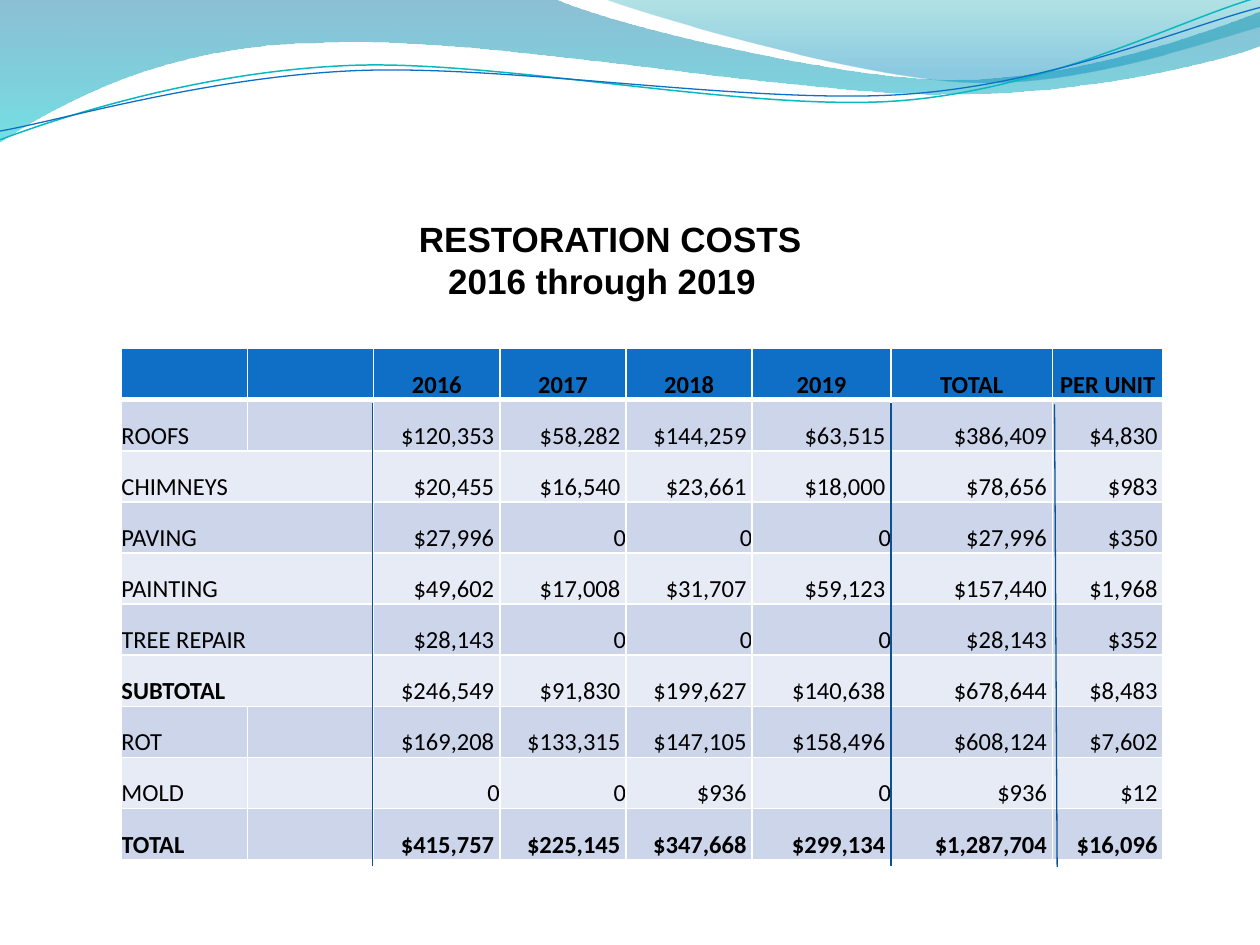
from dataclasses import dataclass
from typing import Optional

from lxml.etree import SubElement
from pptx import Presentation
from pptx.dml.color import RGBColor
from pptx.enum.shapes import MSO_CONNECTOR
from pptx.enum.text import MSO_ANCHOR, PP_ALIGN
from pptx.oxml import parse_xml
from pptx.oxml.ns import nsdecls, qn
from pptx.util import Pt

BLACK, WHITE, BLUE = "000000", "FFFFFF", "0F6FC6"
BANDS = ("CCD5EA", "E7EBF5")


@dataclass
class Stop:
    position: float
    color: str
    opacity: int


@dataclass
class Wave:
    """Outline in points: 2 numbers make a straight step, 6 a Bezier curve."""
    start: tuple
    steps: list
    stops: tuple = ()
    line: Optional[str] = None
    width: float = 0
    rotation: float = 0


@dataclass
class CostRow:
    label: str
    values: tuple
    merged: bool = False
    bold_label: bool = False
    bold_values: bool = False


@dataclass
class Rule:
    begin: tuple
    end: tuple


WAVES = [
    Wave((0, -0.7), [
        (316.8, -0.7),
        (342.7, 12.2, 478.1, 45.4, 545.8, 45.4),
        (614.2, 45.4, 689.8, 18.7, 720, 6.5),
        (720.7, 25.9),
        (707.8, 31.7, 626.4, 54.7, 537.1, 54),
        (447.8, 54, 275, 20.2, 185, 24.5),
        (92.9, 25.2, 33.1, 59.8, -0.7, 81.4),
        (0, -0.7),
    ], stops=(Stop(0, "0074A1", 45), Stop(1, "00C6CF", 55))),
    Wave((344.9, -0.7), [
        (366.5, 7.9, 491, 44.6, 553.7, 46.8),
        (616.3, 49.7, 691.9, 23, 720, 15.1),
        (720, 0),
        (344.9, -0.7),
    ], stops=(Stop(0, "00A1A9", 30), Stop(0.8, "008BBF", 45))),
    Wave((-1.4, 62.9), [
        (33.7, 51.6, 114, 29.4, 199.8, 29.9),
        (284.8, 30.3, 425.8, 67.2, 512.4, 64.9),
        (599, 62.4, 676.4, 25.7, 720.2, 15.6),
    ], line="0AB8BF", width=0.85, rotation=357.3),
    Wave((-1.2, 57.9), [
        (32.9, 53.7, 118.3, 32.5, 204, 33),
        (290.5, 33.5, 429, 63.1, 515.5, 61.3),
        (601.4, 59.6, 678.5, 30.1, 721.4, 21.3),
    ], line=BLUE, width=0.75, rotation=357.3),
]

HEADERS = ("", "", "2016", "2017", "2018", "2019", "TOTAL", "PER UNIT")
COSTS = [
    CostRow("ROOFS", (120353, 58282, 144259, 63515, 386409, 4830)),
    CostRow("CHIMNEYS", (20455, 16540, 23661, 18000, 78656, 983), merged=True),
    CostRow("PAVING", (27996, 0, 0, 0, 27996, 350), merged=True),
    CostRow("PAINTING", (49602, 17008, 31707, 59123, 157440, 1968), merged=True),
    CostRow("TREE REPAIR", (28143, 0, 0, 0, 28143, 352), merged=True),
    CostRow("SUBTOTAL", (246549, 91830, 199627, 140638, 678644, 8483),
            merged=True, bold_label=True),
    CostRow("ROT", (169208, 133315, 147105, 158496, 608124, 7602)),
    CostRow("MOLD", (0, 0, 936, 0, 936, 12)),
    CostRow("TOTAL", (415757, 225145, 347668, 299134, 1287704, 16096),
            bold_label=True, bold_values=True),
]
COLUMN_WIDTHS = (72.1, 72.1, 72.1, 72.1, 72.1, 79.3, 92.4, 63.2)
ROW_HEIGHT = 29.2
RULES = [
    Rule((213, 494.6), (213, 230.4)),
    Rule((509.2, 230.4), (509.2, 494.6)),
    Rule((602.6, 231.1), (604.1, 495.4)),
]


def rgb(color: str) -> RGBColor:
    return RGBColor.from_string(color)


def write(p, text: str, *, size: float, font: str, color: str = BLACK,
          bold: bool = False, align=PP_ALIGN.LEFT, indent: float = 0) -> None:
    p.alignment = align
    if indent:
        p._p.get_or_add_pPr().set("marL", str(Pt(indent)))
    r = p.add_run()
    r.text = text
    r.font.size, r.font.name, r.font.bold = Pt(size), font, bold
    r.font.color.rgb = rgb(color)


def bend(sp, steps: list) -> None:
    """Turn each three straight steps that stand for a curve into one Bezier."""
    segments = iter(list(sp._element.spPr.iter(qn("a:lnTo"))))
    for step in steps:
        first = next(segments)
        if len(step) == 6:
            first.tag = qn("a:cubicBezTo")
            for _ in range(2):
                extra = next(segments)
                first.append(extra[0])
                extra.getparent().remove(extra)


def draw_wave(s, wave: Wave) -> None:
    points = [(Pt(step[i]), Pt(step[i + 1]))
              for step in wave.steps for i in range(0, len(step), 2)]
    builder = s.shapes.build_freeform(*(Pt(v) for v in wave.start))
    builder.add_line_segments(points, close=bool(wave.stops))
    sp = builder.convert_to_shape()
    bend(sp, wave.steps)
    sp.rotation = wave.rotation
    sp.shadow.inherit = False
    if wave.stops:
        sp.line.fill.background()
        sp.fill.gradient()
        sp.fill.gradient_angle = 270
        for target, stop in zip(sp.fill.gradient_stops, wave.stops):
            target.position = stop.position
            target.color.rgb = rgb(stop.color)
        colors = sp._element.spPr.iter(qn("a:srgbClr"))
        for element, stop in zip(colors, wave.stops):
            SubElement(element, qn("a:alpha")).set("val", str(stop.opacity * 1000))
    else:
        sp.fill.background()
        sp.line.color.rgb = rgb(wave.line)
        sp.line.width = Pt(wave.width)


def style_cell(cell, fill: str, top: float = 1, bottom: float = 1) -> None:
    cell.margin_left = cell.margin_right = cell.margin_top = cell.margin_bottom = 0
    cell.vertical_anchor = MSO_ANCHOR.BOTTOM
    cell.fill.solid()
    cell.fill.fore_color.rgb = rgb(fill)
    sides = (("L", 1), ("R", 1), ("T", top), ("B", bottom))
    for i, (side, width) in enumerate(sides):
        cell._tc.tcPr.insert(i, parse_xml(
            f'<a:ln{side} {nsdecls("a")} w="{Pt(width)}"><a:solidFill>'
            f'<a:srgbClr val="{WHITE}"/></a:solidFill></a:ln{side}>'))


def draw_table(s) -> None:
    rows, cols = len(COSTS) + 1, len(HEADERS)
    table = s.shapes.add_table(rows, cols, Pt(69.4), Pt(199.2), Pt(sum(COLUMN_WIDTHS)),
                               Pt(ROW_HEIGHT * rows)).table
    for column, width in zip(table.columns, COLUMN_WIDTHS):
        column.width = Pt(width)
    for row in table.rows:
        row.height = Pt(ROW_HEIGHT)
    # Header row
    for c, header in enumerate(HEADERS):
        cell = table.cell(0, c)
        style_cell(cell, BLUE, bottom=3)
        if header:
            write(cell.text_frame.paragraphs[0], header, size=14, font="Calibri",
                  bold=True, align=PP_ALIGN.CENTER)
    # Cost rows
    for i, cost in enumerate(COSTS):
        cells = [table.cell(i + 1, c) for c in range(cols)]
        for cell in cells:
            style_cell(cell, BANDS[i % 2], top=1 if i else 3)
        if cost.merged:
            cells[0].merge(cells[1])
        write(cells[0].text_frame.paragraphs[0], cost.label, size=14, font="Calibri",
              bold=cost.bold_label)
        for cell, value in zip(cells[2:], cost.values):
            write(cell.text_frame.paragraphs[0], f"${value:,} " if value else "0",
                  size=14, font="Calibri", bold=cost.bold_values, align=PP_ALIGN.RIGHT)


def draw_rule(s, rule: Rule) -> None:
    line = s.shapes.add_connector(MSO_CONNECTOR.STRAIGHT,
                                  *(Pt(v) for v in rule.begin + rule.end))
    line.line.color.rgb = rgb("095295")
    line.line.width = Pt(0.75)
    SubElement(line._element.spPr, qn("a:effectLst"))


def main() -> None:
    prs = Presentation()
    prs.slide_width, prs.slide_height = Pt(720), Pt(540)
    s = prs.slides.add_slide(prs.slide_layouts[6])

    # Wave decoration
    for wave in WAVES:
        draw_wave(s, wave)

    # Title
    tf = s.shapes.add_textbox(Pt(232.3), Pt(121), Pt(240.5), Pt(55.4)).text_frame
    tf.word_wrap = False
    write(tf.paragraphs[0], "RESTORATION COSTS", size=20, font="Arial", bold=True)
    write(tf.add_paragraph(), "2016 through 2019", size=20, font="Arial", bold=True,
          indent=16.7)

    # Cost table and its column rules
    draw_table(s)
    for rule in RULES:
        draw_rule(s, rule)

    prs.save("out.pptx")


if __name__ == "__main__":
    main()
